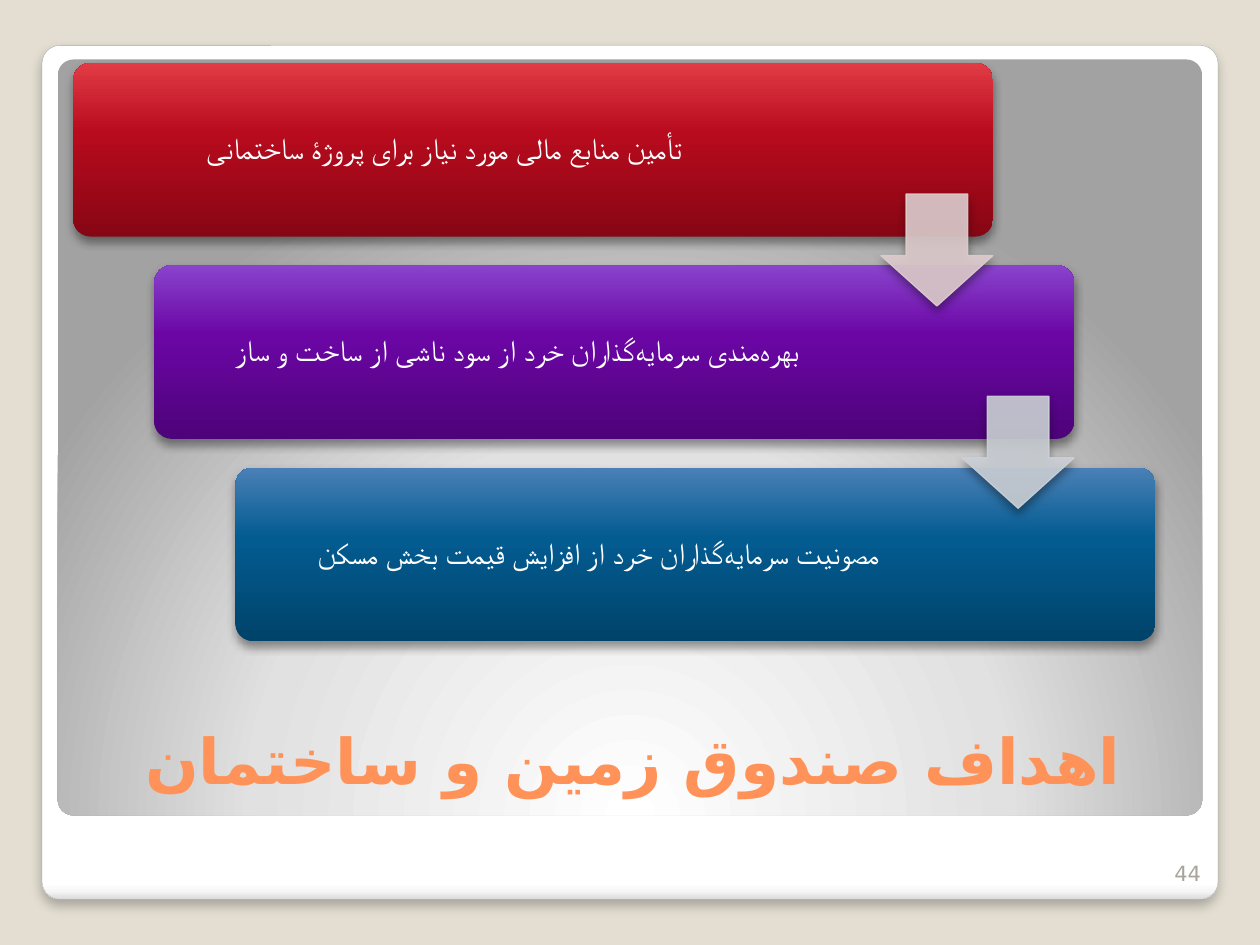
import pptx
import pptx.util
import pptx.dml.color
import pptx.enum.shapes
import pptx.enum.text
import pptx.oxml
import pptx.oxml.ns
from dataclasses import dataclass

Pt = pptx.util.Pt
SHAPES = pptx.enum.shapes.MSO_SHAPE
ALIGN = pptx.enum.text.PP_ALIGN
ANCHOR = pptx.enum.text.MSO_ANCHOR
NAMESPACE = pptx.oxml.ns.nsdecls("a")


@dataclass(frozen=True)
class Theme:
    background: str = "E3DED1"
    frame_line: str = "A4A4A4"
    title: str = "FF9258"
    card_text: str = "FFFFFF"
    number: str = "A8A49B"
    title_font: str = "DejaVu Sans"
    card_font: str = "DejaVu Sans Mono"
    title_size: float = 36
    card_size: float = 17
    number_size: float = 12


THEME = Theme()
TITLE = "اهداف صندوق زمین و ساختمان"
NUMBER = "44"
HALF_SPACE_MARK = "|"
HALF_SPACE = chr(8204)
CARDS = [
    ("تأمین منابع مالی مورد نیاز برای پروژۀ ساختمانی", ("870614", "B80B1E", "E13C45"), 418.3),
    ("بهره|مندی سرمایه|گذاران خرد از سود ناشی از ساخت و ساز", ("4D0379", "6B06A5", "8943CC"), 409),
    ("مصونیت سرمایه|گذاران خرد از افزایش قیمت بخش مسکن", ("00436A", "035C91", "4A80B7"), 409),
]
ARROW_COLORS = ["DFCDCE", "CCD1D7"]
FRAME_STOPS = [(0, "FFFFFF"), (98, "FFFFFF"), (99, "F7F7F7"), (100, "DADADA")]
PANEL_STOPS = [(0, "FFFFFF"), (55, "E1E1E1"), (100, "A2A2A2")]
LINEAR = '<a:lin ang="{}" scaled="0"/>'
RADIAL = '<a:path path="circle"><a:fillToRect l="50000" t="175000" r="50000" b="-75000"/></a:path>'
CARD_LEFT, CARD_TOP, CARD_WIDTH, CARD_HEIGHT = 41.8, 36, 525.6, 99.2
STEP_X, STEP_Y = 46.4, 115.6
CARD_INSET = 2.9
ARROW_SIZE, ARROW_DROP = 64, 74.9


def rgb(value):
    return pptx.dml.color.RGBColor.from_string(value)


def add_shape(slide, kind, box, adjustments):
    shape = slide.shapes.add_shape(kind, *map(Pt, box))
    for index, value in enumerate(adjustments):
        shape.adjustments[index] = value
    shape.shadow.inherit = False
    shape.line.fill.background()
    return shape


def set_gradient(shape, stops, direction):
    stop_xml = "".join(
        f'<a:gs pos="{position * 1000}"><a:srgbClr val="{color}"/></a:gs>'
        for position, color in stops
    )
    gradient = pptx.oxml.parse_xml(
        f'<a:gradFill {NAMESPACE} rotWithShape="1"><a:gsLst>{stop_xml}</a:gsLst>{direction}</a:gradFill>'
    )
    shape._element.spPr.find(pptx.oxml.ns.qn("a:prstGeom")).addnext(gradient)


def set_shadow(shape, opacity, blur, distance):
    effects = shape._element.spPr.find(pptx.oxml.ns.qn("a:effectLst"))
    effects.append(pptx.oxml.parse_xml(
        f'<a:outerShdw {NAMESPACE} blurRad="{Pt(blur)}" dist="{Pt(distance)}" dir="5400000" '
        f'algn="t" rotWithShape="0"><a:srgbClr val="000000">'
        f'<a:alpha val="{opacity * 1000}"/></a:srgbClr></a:outerShdw>'
    ))


def set_opacity(properties, opacity):
    for color in properties.iter(pptx.oxml.ns.qn("a:srgbClr")):
        color.append(pptx.oxml.parse_xml(f'<a:alpha {NAMESPACE} val="{opacity * 1000}"/>'))


def add_text(slide, text, box, font, size, color, alignment, anchor, wrap=True):
    text_box = slide.shapes.add_textbox(*map(Pt, box))
    frame = text_box.text_frame
    frame.word_wrap = wrap
    frame.vertical_anchor = anchor
    paragraph = frame.paragraphs[0]
    paragraph.text = text
    paragraph.alignment = alignment
    paragraph.font.name = font
    paragraph.font.size = Pt(size)
    paragraph.font.color.rgb = rgb(color)
    return frame, paragraph


def set_right_to_left(paragraph):
    paragraph._p.get_or_add_pPr().set("rtl", "1")


def add_card(slide, text, colors, text_width, left, top):
    card = add_shape(slide, SHAPES.ROUNDED_RECTANGLE, (left, top, CARD_WIDTH, CARD_HEIGHT), [0.1])
    set_gradient(card, zip((0, 60, 100), colors), LINEAR.format(16200000))
    set_shadow(card, 40, 5.2, 3)
    box = (left + CARD_INSET, top + CARD_INSET, text_width, CARD_HEIGHT - 2 * CARD_INSET)
    frame, paragraph = add_text(slide, text.replace(HALF_SPACE_MARK, HALF_SPACE), box,
                                THEME.card_font, THEME.card_size, THEME.card_text,
                                ALIGN.CENTER, ANCHOR.MIDDLE, wrap=False)
    frame.margin_left = frame.margin_right = frame.margin_top = frame.margin_bottom = Pt(5)
    paragraph.line_spacing = 0.9
    set_right_to_left(paragraph)


def add_arrow(slide, color, left, top):
    arrow = add_shape(slide, SHAPES.DOWN_ARROW, (left, top, ARROW_SIZE, ARROW_SIZE), [0.55, 0.45])
    arrow.fill.solid()
    arrow.fill.fore_color.rgb = rgb(color)
    arrow.line.color.rgb = rgb(color)
    arrow.line.width = Pt(0.75)
    set_opacity(arrow._element.spPr, 90)
    set_shadow(arrow, 40, 5.2, 3)


def main():
    presentation = pptx.Presentation()
    presentation.slide_width, presentation.slide_height = Pt(720), Pt(540)
    slide = presentation.slides.add_slide(presentation.slide_layouts[6])
    slide.background.fill.solid()
    slide.background.fill.fore_color.rgb = rgb(THEME.background)

    frame = add_shape(slide, SHAPES.ROUNDED_RECTANGLE, (24, 26, 672, 488), [0.021])
    set_gradient(frame, FRAME_STOPS, LINEAR.format(5400000))
    frame.line.color.rgb = rgb(THEME.frame_line)
    frame.line.width = Pt(0.16)
    set_shadow(frame, 25, 6, 4)
    panel = add_shape(slide, SHAPES.ROUNDED_RECTANGLE, (33, 34, 654, 432), [0.021])
    set_gradient(panel, PANEL_STOPS, RADIAL)

    _, title = add_text(slide, TITLE, (39.6, 392.4, 644.4, 82.8), THEME.title_font,
                        THEME.title_size, THEME.title, ALIGN.CENTER, ANCHOR.MIDDLE)
    title.font.bold = True
    set_right_to_left(title)
    title.font._element.append(
        pptx.oxml.parse_xml(f'<a:cs {NAMESPACE} typeface="{THEME.title_font}"/>'))

    origins = [(CARD_LEFT + i * STEP_X, CARD_TOP + i * STEP_Y) for i in range(len(CARDS))]
    for card, origin in zip(CARDS, origins):
        add_card(slide, *card, *origin)
    for color, (left, top) in zip(ARROW_COLORS, origins):
        add_arrow(slide, color, left + CARD_WIDTH - ARROW_SIZE, top + ARROW_DROP)

    add_text(slide, NUMBER, (657.4, 481, 36, 28.8), THEME.title_font, THEME.number_size,
             THEME.number, ALIGN.RIGHT, ANCHOR.BOTTOM)
    presentation.save("out.pptx")


if __name__ == "__main__":
    main()
